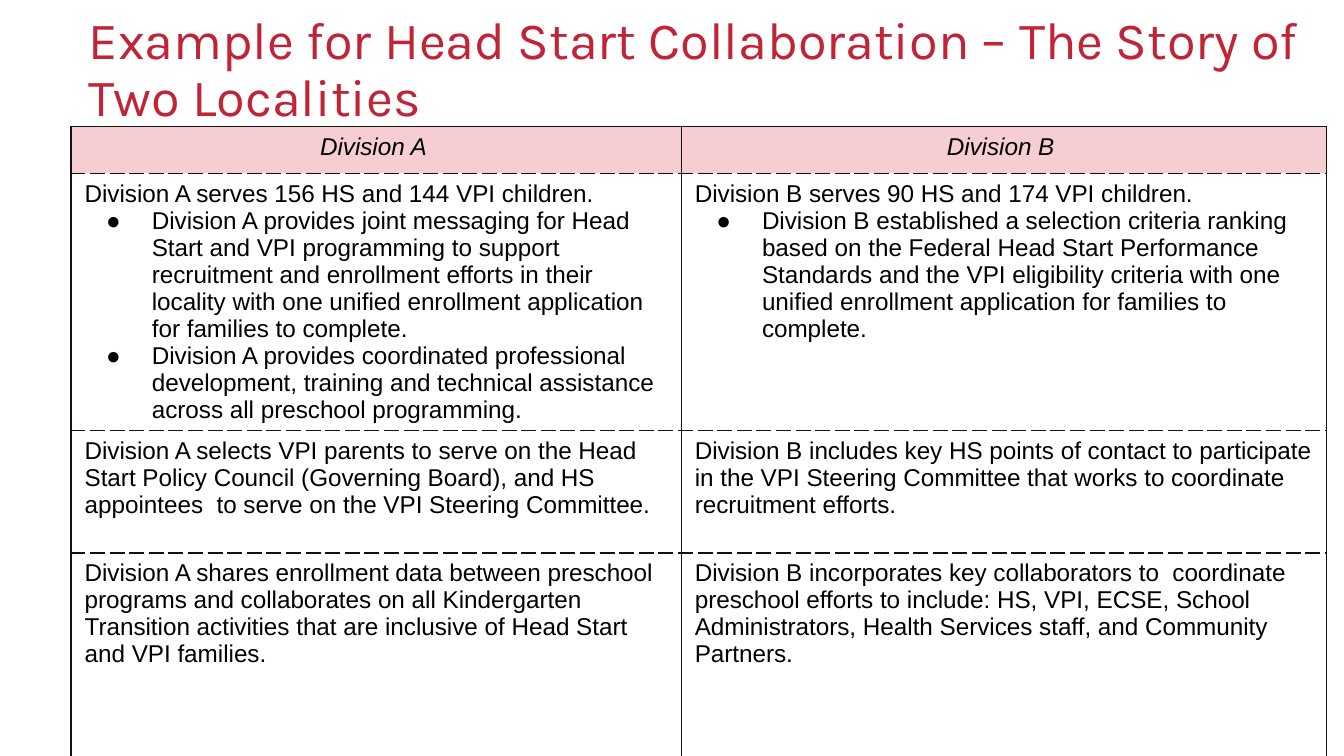
from dataclasses import dataclass

from lxml import etree
from pptx import Presentation
from pptx import util as u
from pptx.dml.color import RGBColor
from pptx.enum import text
from pptx.oxml import ns


@dataclass(frozen=True)
class Theme:
    title_font: str = "Karla"
    body_font: str = "Arial"
    title_size: float = 28
    body_size: float = 13
    title_color: str = "C12436"
    body_color: str = "000000"
    header_fill: str = "F6CED2"
    border_color: str = "0F150D"
    border_width: float = 1


THEME = Theme()
SLIDE_SIZE = (10, 10 * 9 / 16)
TITLE_BOX = (0.59, 0.13, 9.41, 0.8)
TABLE_ORIGIN = (0.53, 0.94)
COLUMN_WIDTHS = (4.54, 4.8)
ROW_HEIGHTS = (0.35, 1.91, 0.91, 1.81)
BULLET_INDENT = (0.5, -0.34)
TITLE = "Example for Head Start Collaboration – The Story of Two Localities"

# Each cell is a list of paragraphs: the first is plain, the rest are bullets
ROWS = [
    (["Division A "], ["Division B "]),
    (
        ["Division A serves 156 HS and 144 VPI children.",
         "Division A provides joint messaging for Head Start and VPI programming "
         "to support recruitment and enrollment efforts in their locality with "
         "one unified enrollment application for families to complete.",
         "Division A provides coordinated professional development, training and "
         "technical assistance across all preschool programming."],
        ["Division B serves 90 HS and 174 VPI children.",
         "Division B established a selection criteria ranking based on the "
         "Federal Head Start Performance Standards and the VPI eligibility "
         "criteria with one unified enrollment application for families to "
         "complete."],
    ),
    (
        ["Division A selects VPI parents to serve on the Head Start Policy Council "
         "(Governing Board), and HS appointees  to serve on the VPI Steering "
         "Committee."],
        ["Division B includes key HS points of contact to participate in the VPI "
         "Steering Committee that works to coordinate recruitment efforts."],
    ),
    (
        ["Division A shares enrollment data between preschool programs and "
         "collaborates on all Kindergarten Transition activities that are "
         "inclusive of Head Start and VPI families."],
        ["Division B incorporates key collaborators to  coordinate preschool "
         "efforts to include: HS, VPI, ECSE, School Administrators, Health "
         "Services staff, and Community Partners."],
    ),
]


def inches(values):
    return [u.Inches(value) for value in values]


def add_child(parent, tag, **attributes):
    return etree.SubElement(parent, ns.qn(tag), attributes)


def style_runs(paragraph, font_name, size, color, italic=False):
    for run in paragraph.runs:
        run.font.name = font_name
        run.font.size = u.Pt(size)
        run.font.color.rgb = RGBColor.from_string(color)
        run.font.italic = italic


def add_bullet(paragraph):
    left, first_line = inches(BULLET_INDENT)
    properties = paragraph._p.get_or_add_pPr()
    properties.set("marL", str(left))
    properties.set("indent", str(first_line))
    color = add_child(properties, "a:buClr")
    add_child(color, "a:srgbClr", val=THEME.body_color)
    add_child(properties, "a:buFont", typeface=THEME.body_font)
    add_child(properties, "a:buChar", char="●")


def add_borders(cell, dashes):
    properties = cell._tc.get_or_add_tcPr()
    for side, dash in dashes.items():
        line = add_child(properties, f"a:ln{side}", w=str(u.Pt(THEME.border_width)))
        fill = add_child(line, "a:solidFill")
        add_child(fill, "a:srgbClr", val=THEME.border_color)
        add_child(line, "a:prstDash", val=dash)


def set_title(slide):
    title = slide.shapes.title
    title.left, title.top, title.width, title.height = inches(TITLE_BOX)
    frame = title.text_frame
    frame.text = TITLE
    frame.word_wrap = True
    frame.auto_size = text.MSO_AUTO_SIZE.NONE
    frame.vertical_anchor = text.MSO_ANCHOR.MIDDLE
    frame.margin_left = frame.margin_right = u.Inches(0.07)
    frame.margin_top = frame.margin_bottom = u.Inches(0.04)
    paragraph = frame.paragraphs[0]
    paragraph.alignment = text.PP_ALIGN.LEFT
    paragraph.line_spacing = 0.9
    style_runs(paragraph, THEME.title_font, THEME.title_size, THEME.title_color)


def fill_cell(cell, lines, is_header):
    # Solid outer top and sides, dashed rules between rows
    add_borders(cell, {"L": "solid", "R": "solid",
                       "T": "solid" if is_header else "dash", "B": "dash"})
    if is_header:
        cell.fill.solid()
        cell.fill.fore_color.rgb = RGBColor.from_string(THEME.header_fill)
    else:
        cell.fill.background()
    cell.margin_left = cell.margin_right = u.Inches(0.1)
    cell.margin_top = cell.margin_bottom = u.Inches(0.05)

    cell.text_frame.text = "\n".join(lines)
    for index, paragraph in enumerate(cell.text_frame.paragraphs):
        if index:
            add_bullet(paragraph)
        if is_header:
            paragraph.alignment = text.PP_ALIGN.CENTER
        style_runs(paragraph, THEME.body_font, THEME.body_size,
                   THEME.body_color, italic=is_header)


def add_comparison_table(slide):
    size = (sum(COLUMN_WIDTHS), sum(ROW_HEIGHTS))
    table = slide.shapes.add_table(len(ROWS), len(COLUMN_WIDTHS),
                                   *inches(TABLE_ORIGIN + size)).table
    table.first_row = table.horz_banding = False
    for column, width in zip(table.columns, inches(COLUMN_WIDTHS)):
        column.width = width
    for row, height in zip(table.rows, inches(ROW_HEIGHTS)):
        row.height = height
    for row_index, row in enumerate(ROWS):
        for column_index, lines in enumerate(row):
            fill_cell(table.cell(row_index, column_index), lines, row_index == 0)


def main():
    presentation = Presentation()
    presentation.slide_width, presentation.slide_height = inches(SLIDE_SIZE)
    slide = presentation.slides.add_slide(presentation.slide_layouts[5])
    set_title(slide)
    add_comparison_table(slide)
    presentation.save("out.pptx")


if __name__ == "__main__":
    main()
